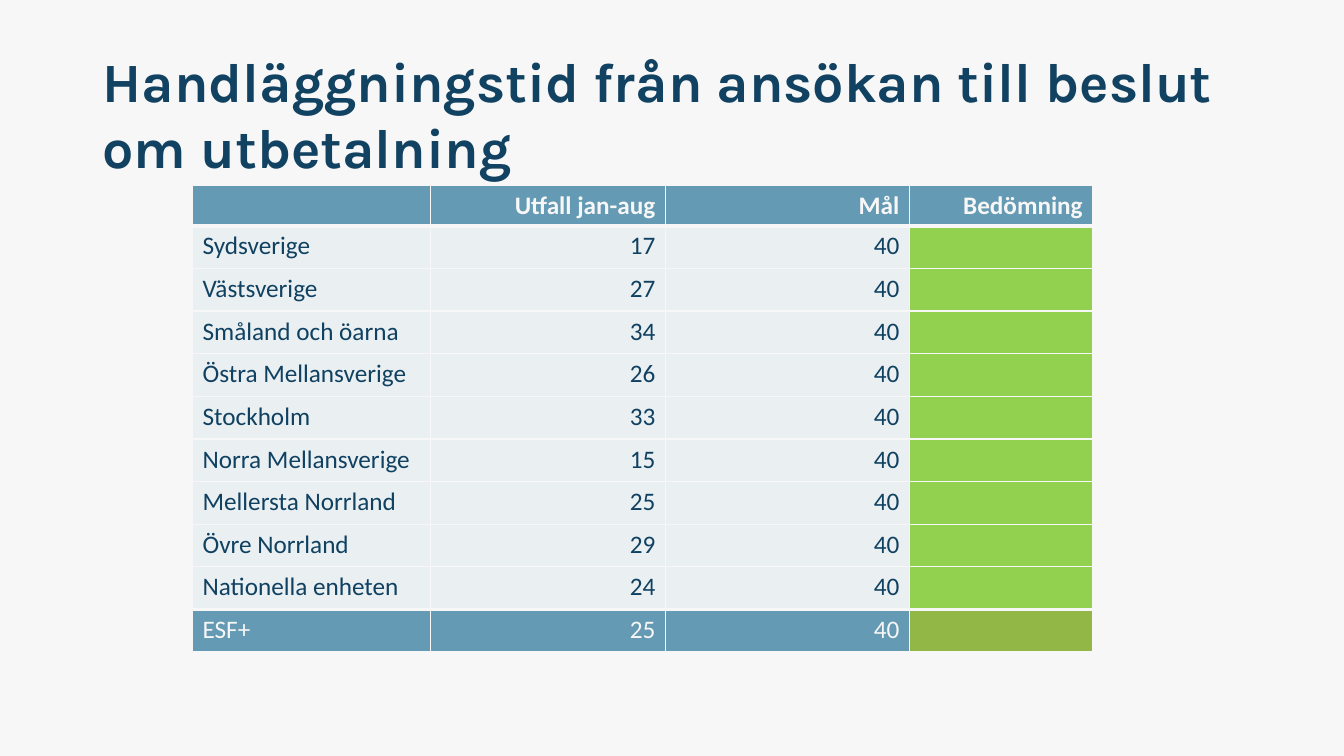
from dataclasses import dataclass

import lxml.etree
import pptx
import pptx.dml.color
import pptx.enum.text
import pptx.oxml.ns
import pptx.util

Inches = pptx.util.Inches
Align = pptx.enum.text.PP_ALIGN

PALE = "F8F7F7"
NAVY = "104161"
BLUE = "649AB3"
MIST = "EAEFF2"
GREEN = "92D050"
OLIVE = "93B747"

COLUMN_WIDTHS = [2.36, 2.33, 2.42, 1.82]
HEADER_HEIGHT = 0.4
ROW_HEIGHT = 0.423
TARGET = 40


@dataclass
class TableRow:
    texts: list[str]
    fill: str = MIST
    rating_fill: str = GREEN
    color: str = NAVY
    bold: bool = False
    top_width: float = 1
    bottom_width: float = 1


OUTCOMES = {
    "Sydsverige": 17,
    "Västsverige": 27,
    "Småland och öarna": 34,
    "Östra Mellansverige": 26,
    "Stockholm": 33,
    "Norra Mellansverige": 15,
    "Mellersta Norrland": 25,
    "Övre Norrland": 29,
    "Nationella enheten": 24,
}


def rgb(value: str) -> pptx.dml.color.RGBColor:
    return pptx.dml.color.RGBColor.from_string(value)


def write_text(frame, text: str, *, size: float, font: str, color: str,
               bold: bool = False, align=Align.LEFT, spacing: int = 0) -> None:
    paragraph = frame.paragraphs[0]
    paragraph.alignment = align
    paragraph.font.size = pptx.util.Pt(size)
    if not text:
        return
    run = paragraph.add_run()
    run.text = text
    run.font.size = pptx.util.Pt(size)
    run.font.name = font
    run.font.bold = bold
    run.font.color.rgb = rgb(color)
    if spacing:
        run.font._element.set("spc", str(spacing))


def set_borders(cell, top_width: float, bottom_width: float) -> None:
    properties = cell._tc.get_or_add_tcPr()
    widths = {"a:lnL": 1, "a:lnR": 1, "a:lnT": top_width, "a:lnB": bottom_width}
    for position, (tag, width) in enumerate(widths.items()):
        line = lxml.etree.Element(pptx.oxml.ns.qn(tag), w=str(pptx.util.Pt(width)))
        fill = lxml.etree.SubElement(line, pptx.oxml.ns.qn("a:solidFill"))
        lxml.etree.SubElement(fill, pptx.oxml.ns.qn("a:srgbClr"), val=PALE)
        properties.insert(position, line)


def fill_row(table, index: int, row: TableRow) -> None:
    for column, text in enumerate(row.texts):
        cell = table.cell(index, column)
        cell.fill.solid()
        is_rating = column == len(row.texts) - 1
        cell.fill.fore_color.rgb = rgb(row.rating_fill if is_rating else row.fill)
        set_borders(cell, row.top_width, row.bottom_width)
        write_text(cell.text_frame, text, size=18, font="Calibri", color=row.color,
                   bold=row.bold, align=Align.RIGHT if column else Align.LEFT)


def add_title(slide) -> None:
    shape = slide.shapes.add_textbox(Inches(0.92), Inches(0.4), Inches(11.5), Inches(1.45))
    frame = shape.text_frame
    frame.word_wrap = True
    frame.vertical_anchor = pptx.enum.text.MSO_ANCHOR.MIDDLE
    write_text(frame, "Handläggningstid från ansökan till beslut om utbetalning",
               size=39.6, font="Karla", color="124261", bold=True)


def add_results(slide) -> None:
    header = TableRow(["", "Utfall jan-aug", "Mål", "Bedömning"], BLUE, BLUE, PALE,
                      bold=True, bottom_width=3)
    regions = [TableRow([name, str(outcome), str(TARGET), ""])
               for name, outcome in OUTCOMES.items()]
    regions[0].top_width = 3
    regions[-1].bottom_width = 3
    total = TableRow(["ESF+", "25", str(TARGET), ""], BLUE, OLIVE, PALE, top_width=3)
    rows = [header, *regions, total]
    height = HEADER_HEIGHT + ROW_HEIGHT * (len(rows) - 1)
    table = slide.shapes.add_table(
        len(rows), len(COLUMN_WIDTHS), Inches(1.91), Inches(1.84),
        Inches(sum(COLUMN_WIDTHS)), Inches(height)).table
    for column, width in zip(table.columns, COLUMN_WIDTHS):
        column.width = Inches(width)
    for index, row in enumerate(rows):
        table.rows[index].height = Inches(ROW_HEIGHT if index else HEADER_HEIGHT)
        fill_row(table, index, row)


def main() -> None:
    presentation = pptx.Presentation()
    presentation.slide_width = Inches(13.33)
    presentation.slide_height = Inches(7.5)
    slide = presentation.slides.add_slide(presentation.slide_layouts[6])
    slide.background.fill.solid()
    slide.background.fill.fore_color.rgb = rgb(PALE)
    add_title(slide)
    add_results(slide)
    presentation.save("out.pptx")


if __name__ == "__main__":
    main()
